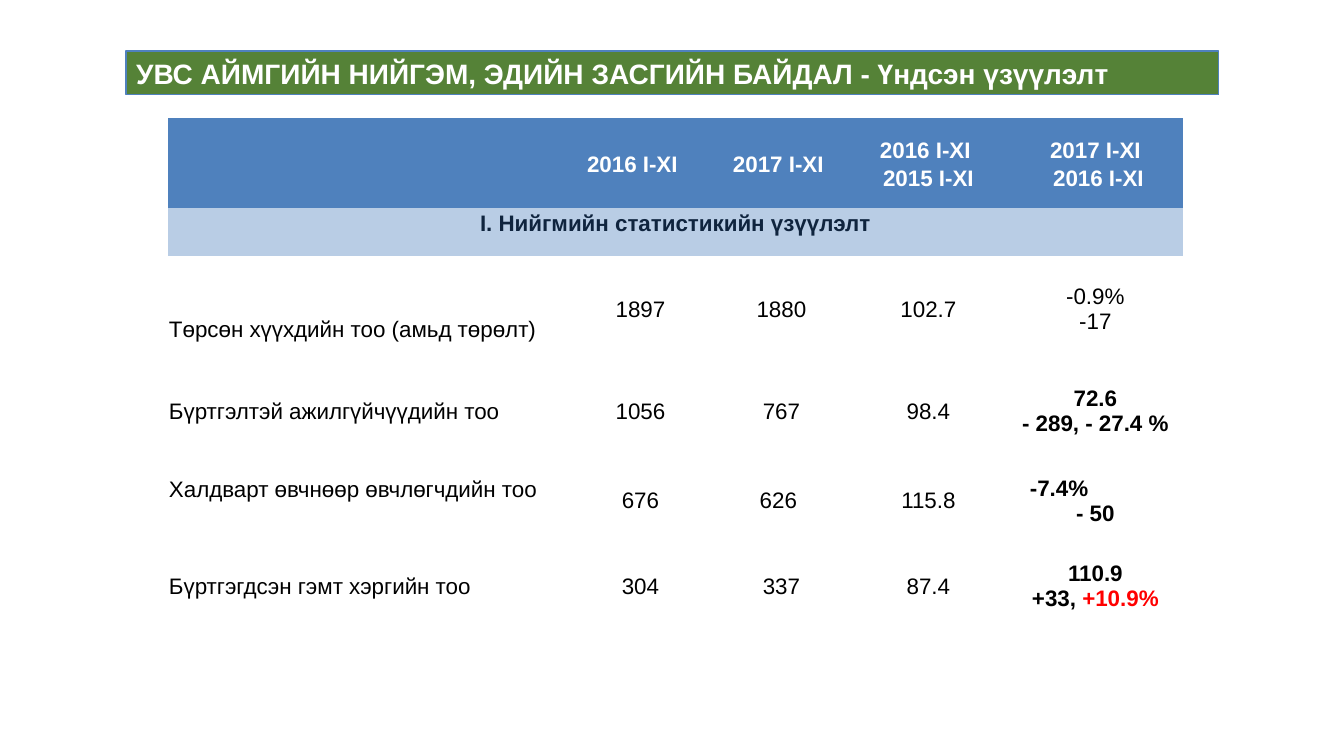
from pptx import Presentation
from pptx.dml.color import RGBColor as Rgb
from pptx.enum.text import MSO_ANCHOR as Anchor, MSO_AUTO_SIZE as Fit, PP_ALIGN as Align
from pptx.util import Pt

PX = 914400 / 100.8
HUES = {
    "green": "558237", "blue": "4F81BD", "pale": "B9CDE5", "navy": "0F243E",
    "white": "FFFFFF", "black": "000000", "red": "FF0000",
}
WIDE = [389, 10, 147, 135, 159, 175]
HIGH = [90, 48, 106, 98, 81, 90]
HEAD = {
    1: ["2016 I-XI "],
    3: ["2017 I-XI "],
    4: ["2016 I-XI ", "2015 I-XI"],
    5: [" 2017 I-XI ", " 2016 I-XI"],
}
ROWS = [
    ("Төрсөн хүүхдийн тоо (амьд төрөлт)", "1897", "1880", "102.7", ["-0.9%", "-17"]),
    ("Бүртгэлтэй ажилгүйчүүдийн тоо", "1056", "767", "98.4", ["72.6", "- 289, - 27.4 %"]),
    ("Халдварт өвчнөөр өвчлөгчдийн тоо", "676", "626 ", "115.8", ["-7.4%", "- 50"]),
    ("Бүртгэгдсэн гэмт хэргийн тоо", "304", "337", "87.4",
     ["110.9", [("+33, ", "black"), ("+10.9%", "red")]]),
]
HEAD_PADS = {"margin_left": 2, "margin_right": 2, "margin_top": 0, "margin_bottom": 0}
BODY_PADS = {"margin_left": 1, "margin_right": 1, "margin_top": 1, "margin_bottom": 0}


def px(n):
    return round(n * PX)


def apply(item, vals):
    for name, val in vals.items():
        setattr(item, name, val)


def paint(item, hue):
    item.fill.solid()
    item.fill.fore_color.rgb = Rgb.from_string(HUES[hue])


def write(para, runs, hue, size=16, bold=False, align=Align.CENTER, space=1.0):
    apply(para, {"alignment": align, "line_spacing": space})
    for text, tint in [(runs, hue)] if isinstance(runs, str) else runs:
        run = para.add_run()
        run.text = text
        apply(run.font, {"name": "Arial", "size": Pt(size), "bold": bold})
        run.font.color.rgb = Rgb.from_string(HUES[tint])


def fill_cell(cell, lines, fill, hue, pads, anchor=Anchor.MIDDLE, **form):
    paint(cell, fill)
    apply(cell, {name: px(n) for name, n in pads.items()})
    cell.vertical_anchor = anchor
    frame = cell.text_frame
    for i, line in enumerate(lines):
        para = frame.add_paragraph() if i else frame.paragraphs[0]
        write(para, line, hue, **form)


def add_title(slide):
    title = slide.shapes.title
    apply(title, {"left": px(126), "top": px(51), "width": px(1093), "height": px(44)})
    paint(title, "green")
    title.line.color.rgb = Rgb.from_string(HUES["blue"])
    title.line.width = Pt(0.75)
    apply(title.text_frame, {"auto_size": Fit.NONE, "word_wrap": True,
                             "vertical_anchor": Anchor.MIDDLE})
    write(title.text_frame.paragraphs[0],
          "УВС АЙМГИЙН НИЙГЭМ, ЭДИЙН ЗАСГИЙН БАЙДАЛ - Үндсэн үзүүлэлт",
          "white", size=20, bold=True, align=Align.JUSTIFY)


def add_grid(slide):
    frame = slide.shapes.add_table(len(HIGH), len(WIDE), px(168), px(118),
                                   px(sum(WIDE)), px(sum(HIGH)))
    for tag in frame.element.iter("{*}tableStyleId"):
        tag.text = "{2D5ABB26-0587-4C30-8999-92F81FD0307C}"
    grid = frame.table
    apply(grid, {"first_row": False, "horz_banding": False})
    for col, n in zip(grid.columns, WIDE):
        col.width = px(n)
    for row, n in zip(grid.rows, HIGH):
        row.height = px(n)
    return grid


def fill_head(grid):
    grid.cell(0, 1).merge(grid.cell(0, 2))
    paint(grid.cell(0, 0), "blue")
    for col, lines in HEAD.items():
        fill_cell(grid.cell(0, col), lines, "blue", "white", HEAD_PADS,
                  bold=True, space=1.15)
    grid.cell(1, 0).merge(grid.cell(1, 5))
    fill_cell(grid.cell(1, 0), ["I. Нийгмийн статистикийн үзүүлэлт"], "pale", "navy",
              HEAD_PADS, anchor=Anchor.TOP, bold=True, space=1.15)


def fill_body(grid):
    shift = {2: {"margin_top": 40}, 4: {"margin_bottom": 24}}
    for row, (label, *vals, last) in enumerate(ROWS, 2):
        grid.cell(row, 0).merge(grid.cell(row, 1))
        fill_cell(grid.cell(row, 0), [label], "white", "black",
                  BODY_PADS | shift.get(row, {}), align=Align.LEFT, space=1.07)
        for col, val in enumerate(vals, 2):
            fill_cell(grid.cell(row, col), [val], "white", "black", BODY_PADS)
        fill_cell(grid.cell(row, 5), last, "white", "black", BODY_PADS, bold=row > 2)
    para = grid.cell(4, 5).text_frame.paragraphs[0]
    para.alignment = Align.LEFT
    para._p.get_or_add_pPr().set("marL", str(px(21)))


def main():
    deck = Presentation()
    apply(deck, {"slide_width": px(1344), "slide_height": px(756)})
    slide = deck.slides.add_slide(deck.slide_layouts[5])
    add_title(slide)
    grid = add_grid(slide)
    fill_head(grid)
    fill_body(grid)
    deck.save("out.pptx")


if __name__ == "__main__":
    main()
